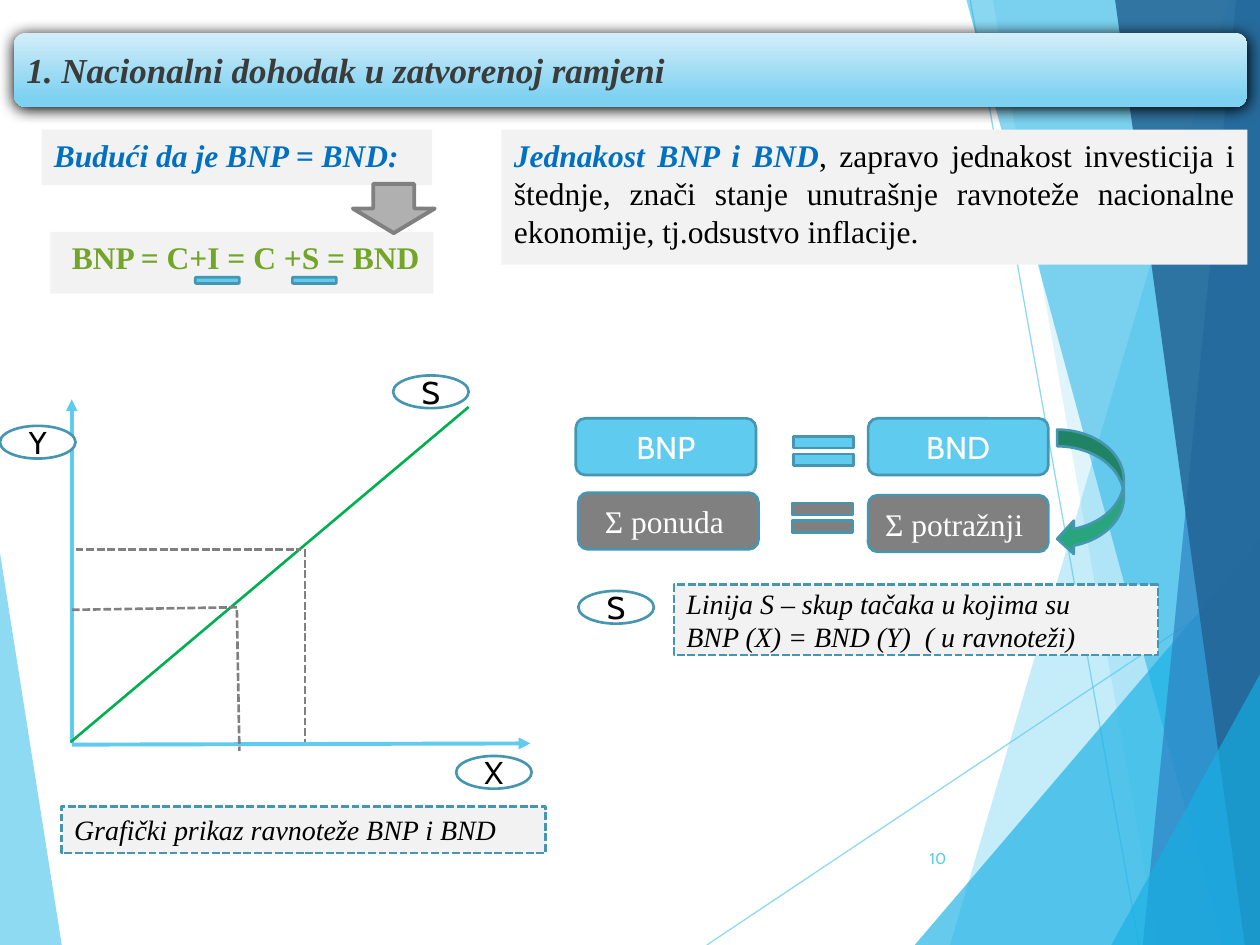
from dataclasses import dataclass
from typing import NamedTuple

from lxml import etree
from pptx import Presentation
from pptx.dml.color import RGBColor
from pptx.enum.dml import MSO_LINE
from pptx.enum.shapes import MSO_CONNECTOR, MSO_SHAPE
from pptx.enum.text import MSO_ANCHOR, PP_ALIGN
from pptx.oxml.ns import qn
from pptx.util import Emu, Inches, Pt

RECT, ROUND, OVAL = MSO_SHAPE.RECTANGLE, MSO_SHAPE.ROUNDED_RECTANGLE, MSO_SHAPE.OVAL
EQUALS, DOWN, CURVED = MSO_SHAPE.MATH_EQUAL, MSO_SHAPE.DOWN_ARROW, MSO_SHAPE.CURVED_LEFT_ARROW
LEFT, CENTER, RIGHT, JUSTIFY = PP_ALIGN.LEFT, PP_ALIGN.CENTER, PP_ALIGN.RIGHT, PP_ALIGN.JUSTIFY
TOP, MIDDLE = MSO_ANCHOR.TOP, MSO_ANCHOR.MIDDLE
DASH = MSO_LINE.SQUARE_DOT

# The slide is a grid of 100 columns and 75 rows
COLUMNS, ROWS = 100, 75
WIDTH, HEIGHT = Inches(10), Inches(7.5)


@dataclass(frozen=True)
class Theme:
    serif: str = "Times New Roman"
    sans: str = "Cabin"
    heading: int = 20
    body: int = 18
    caption: int = 16
    number: int = 9
    sky: str = "5FCBEF"
    azure: str = "17B0E4"
    blue: str = "2E83C3"
    navy: str = "226292"
    outline: str = "4696B1"
    accent: str = "0070C0"
    formula: str = "72A528"
    panel: str = "F2F2F2"
    gray: str = "808080"
    silver: str = "B0B0B0"
    teal: str = "29A57D"
    saving: str = "00B050"
    title: str = "3B3B3B"
    title_top: str = "D4EEF9"
    title_end: str = "7DD1F1"
    black: str = "000000"
    white: str = "FFFFFF"


T = Theme()


class Run(NamedTuple):
    text: str
    color: str = T.black
    size: int = T.body
    font: str = T.serif
    bold: bool = False
    italic: bool = False


class Box(NamedTuple):
    kind: int
    at: tuple  # left column, top row, columns, rows
    fill: str | None = None
    edge: str | None = None
    weight: float = 1.5
    dash: int | None = None
    lines: tuple = ()  # paragraphs, each a tuple of runs
    align: int = CENTER
    anchor: int = MIDDLE


class Stroke(NamedTuple):
    start: tuple
    end: tuple
    color: str
    weight: float = 1.5
    dash: int | None = None
    arrow: bool = False
    opacity: int = 100


class Facet(NamedTuple):
    corners: tuple
    color: str
    opacity: int


def col(value: float) -> Emu:
    return Emu(round(WIDTH * value / COLUMNS))


def row(value: float) -> Emu:
    return Emu(round(HEIGHT * value / ROWS))


def rgb(color: str) -> RGBColor:
    return RGBColor.from_string(color)


def set_opacity(properties, percent: int) -> None:
    for color in properties.iter(qn("a:srgbClr")):
        etree.SubElement(color, qn("a:alpha"), val=str(percent * 1000))


def draw_facet(shapes, facet: Facet) -> None:
    points = [(col(x), row(y)) for x, y in facet.corners]
    builder = shapes.build_freeform(*points[0])
    builder.add_line_segments(points[1:], close=True)
    shape = builder.convert_to_shape()
    shape.shadow.inherit = False
    shape.fill.solid()
    shape.fill.fore_color.rgb = rgb(facet.color)
    shape.line.fill.background()
    set_opacity(shape._element.spPr, facet.opacity)


def draw_stroke(shapes, stroke: Stroke) -> None:
    (x1, y1), (x2, y2) = stroke.start, stroke.end
    line = shapes.add_connector(MSO_CONNECTOR.STRAIGHT, col(x1), row(y1), col(x2), row(y2))
    line.line.color.rgb = rgb(stroke.color)
    line.line.width = Pt(stroke.weight)
    if stroke.dash:
        line.line.dash_style = stroke.dash
    properties = line._element.spPr
    if stroke.arrow:
        etree.SubElement(properties.find(qn("a:ln")), qn("a:tailEnd"), type="triangle")
    if stroke.opacity < 100:
        set_opacity(properties, stroke.opacity)
    etree.SubElement(properties, qn("a:effectLst"))


def write(frame, box: Box) -> None:
    frame.word_wrap = True
    frame.vertical_anchor = box.anchor
    for index, runs in enumerate(box.lines):
        paragraph = frame.add_paragraph() if index else frame.paragraphs[0]
        paragraph.alignment = box.align
        for item in runs:
            run = paragraph.add_run()
            run.text = item.text
            run.font.color.rgb = rgb(item.color)
            style = {"name": item.font, "size": Pt(item.size), "bold": item.bold, "italic": item.italic}
            for key, value in style.items():
                setattr(run.font, key, value)


def draw_box(shapes, box: Box):
    x, y, w, h = box.at
    shape = shapes.add_shape(box.kind, col(x), row(y), col(w), row(h))
    shape.shadow.inherit = False
    if box.fill:
        shape.fill.solid()
        shape.fill.fore_color.rgb = rgb(box.fill)
    else:
        shape.fill.background()
    if box.edge:
        shape.line.color.rgb = rgb(box.edge)
        shape.line.width = Pt(box.weight)
        if box.dash:
            shape.line.dash_style = box.dash
    else:
        shape.line.fill.background()
    if box.lines:
        write(shape.text_frame, box)
    return shape


def draw_title(shapes, box: Box) -> None:
    banner = draw_box(shapes, box)
    banner.fill.gradient()
    banner.fill.gradient_angle = 270
    for stop, (place, color) in zip(banner.fill.gradient_stops, ((0, T.title_top), (0.88, T.title_end))):
        stop.position, stop.color.rgb = place, rgb(color)
    frame = banner.text_frame
    insets = {"margin_left": 0.07, "margin_right": 0.07, "margin_top": 0.04, "margin_bottom": 0.04}
    for key, value in insets.items():
        setattr(frame, key, Inches(value))
    effects = banner._element.spPr.find(qn("a:effectLst"))
    shadow = etree.SubElement(effects, qn("a:outerShdw"), blurRad=str(Pt(8.5)), dist=str(Pt(1)),
                              dir="5400000", algn="ctr", rotWithShape="0")
    etree.SubElement(shadow, qn("a:srgbClr"), val=T.black)


def label(letter: str, x: float, y: float) -> Box:
    return Box(OVAL, (x, y, 6, 2.6), T.white, T.outline, lines=((Run(letter, font=T.sans),),))


def term(text: str, x: float, y: float, fill: str, font: str) -> Box:
    return Box(ROUND, (x, y, 14.3, 4.5), fill, T.outline, lines=((Run(text, T.white, font=font),),))


def caption(at: tuple, *lines: str) -> Box:
    runs = tuple((Run(line, size=T.caption, italic=True),) for line in lines)
    return Box(RECT, at, T.panel, T.outline, dash=DASH, lines=runs, align=LEFT)


def lead(text: str) -> Run:
    return Run(text, T.accent, bold=True, italic=True)


# Background facets and thin rays, back to front
BACKDROP = (
    Facet(((0, 43.9), (4.9, 75), (0, 75)), T.sky, 70),
    Stroke((56.1, 75), (100, 45.7), T.sky, 0.75, opacity=70),
    Stroke((77, 0), (90.4, 75), T.sky, 0.75, opacity=70),
    Facet(((97.5, 0), (75.4, 75), (100, 75), (100, 0)), T.sky, 36),
    Facet(((78.8, 0), (91.9, 75), (100, 75), (100, 0)), T.sky, 20),
    Facet(((72.6, 75), (100, 42.9), (100, 75)), T.azure, 66),
    Facet(((76.7, 0), (97, 75), (100, 75), (100, 0)), T.azure, 50),
    Facet(((98.1, 0), (90.7, 75), (100, 75), (100, 0)), T.blue, 70),
    Facet(((88.5, 0), (98.8, 75), (100, 75), (100, 0)), T.navy, 82),
    Facet(((88.2, 75), (100, 53.5), (100, 75)), T.azure, 66),
)

TITLE = Box(ROUND, (1.1, 2.6, 97.9, 5.9), align=LEFT, lines=(
    (Run("1. Nacionalni dohodak u zatvorenoj ramjeni", T.title, T.heading, bold=True, italic=True),),))

CONTENT = (
    Box(RECT, (70.5, 66.1, 5.6, 4), align=RIGHT, lines=((Run("10", T.sky, T.number, T.sans),),)),
    # Identity of product and demand
    Box(RECT, (4, 18.4, 30.4, 4.9), T.panel, anchor=TOP,
        lines=((Run(" "), Run("BNP = C+I = C +S = BND", T.formula, bold=True)),)),
    Box(RECT, (3.3, 10.3, 31, 4.4), T.panel, align=JUSTIFY, anchor=TOP,
        lines=((lead("Budući da je BNP = BND:"),),)),
    Box(DOWN, (28, 14.6, 6.5, 3.9), T.silver, T.gray, 2.25),
    # Graph: axes, line S and the guides of two points
    Stroke((5.7, 59.1), (42.1, 59), T.sky, 2.25, arrow=True),
    Stroke((5.7, 59), (5.7, 31.7), T.sky, 2.25, arrow=True),
    Stroke((5.6, 58.9), (37.2, 32.3), T.saving),
    Stroke((5.7, 48.4), (18.8, 48.2), T.gray, dash=DASH),
    Stroke((6, 43.6), (23.9, 43.6), T.gray, dash=DASH),
    Stroke((18.8, 48.4), (19, 59.6), T.gray, dash=DASH),
    Stroke((24.2, 43.6), (24.2, 58.9), T.gray, dash=DASH),
    label("S", 31.2, 29.8),
    label("X", 36.2, 60),
    label("Y", 0, 33.8),
    caption((4.9, 64, 38.4, 3.7), "Grafički prikaz ravnoteže BNP i BND"),
    # Explanation and the two equalities
    Box(RECT, (39.8, 10.3, 59.2, 10.7), T.panel, align=JUSTIFY, anchor=TOP, lines=((
        lead("Jednakost BNP i BND"),
        Run(", zapravo jednakost investicija i štednje, znači stanje unutrašnje ravnoteže "
            "nacionalne ekonomije, tj.odsustvo inflacije.")),)),
    term("BNP", 45.7, 33.2, T.sky, T.sans),
    term("BND", 68.9, 33.2, T.sky, T.sans),
    Box(EQUALS, (62.1, 33.8, 6.5, 4), T.sky, T.outline),
    term("Ʃ ponuda ", 45.9, 39.1, T.gray, T.serif),
    term("Ʃ potražnji ", 68.9, 39.3, T.gray, T.serif),
    Box(CURVED, (83.9, 34.1, 5.3, 10), T.teal, T.outline),
    Box(EQUALS, (62, 39.1, 6.5, 4), T.gray, T.outline),
    # Legend of line S
    label("S", 45.9, 46.9),
    caption((53.5, 46.4, 38.4, 5.6), "Linija S – skup tačaka u kojima su", "BNP (X) = BND (Y)  ( u ravnoteži)"),
    # Marks under I and S
    *(Box(ROUND, (x, 22, 3.5, 0.5), T.sky, T.outline) for x in (15.5, 23.2)),
)

PAINTERS = {Box: draw_box, Stroke: draw_stroke, Facet: draw_facet}


def main() -> None:
    deck = Presentation()
    deck.slide_width, deck.slide_height = WIDTH, HEIGHT
    shapes = deck.slides.add_slide(deck.slide_layouts[6]).shapes
    for part in BACKDROP:
        PAINTERS[type(part)](shapes, part)
    draw_title(shapes, TITLE)
    for part in CONTENT:
        PAINTERS[type(part)](shapes, part)
    deck.save("out.pptx")


if __name__ == "__main__":
    main()
